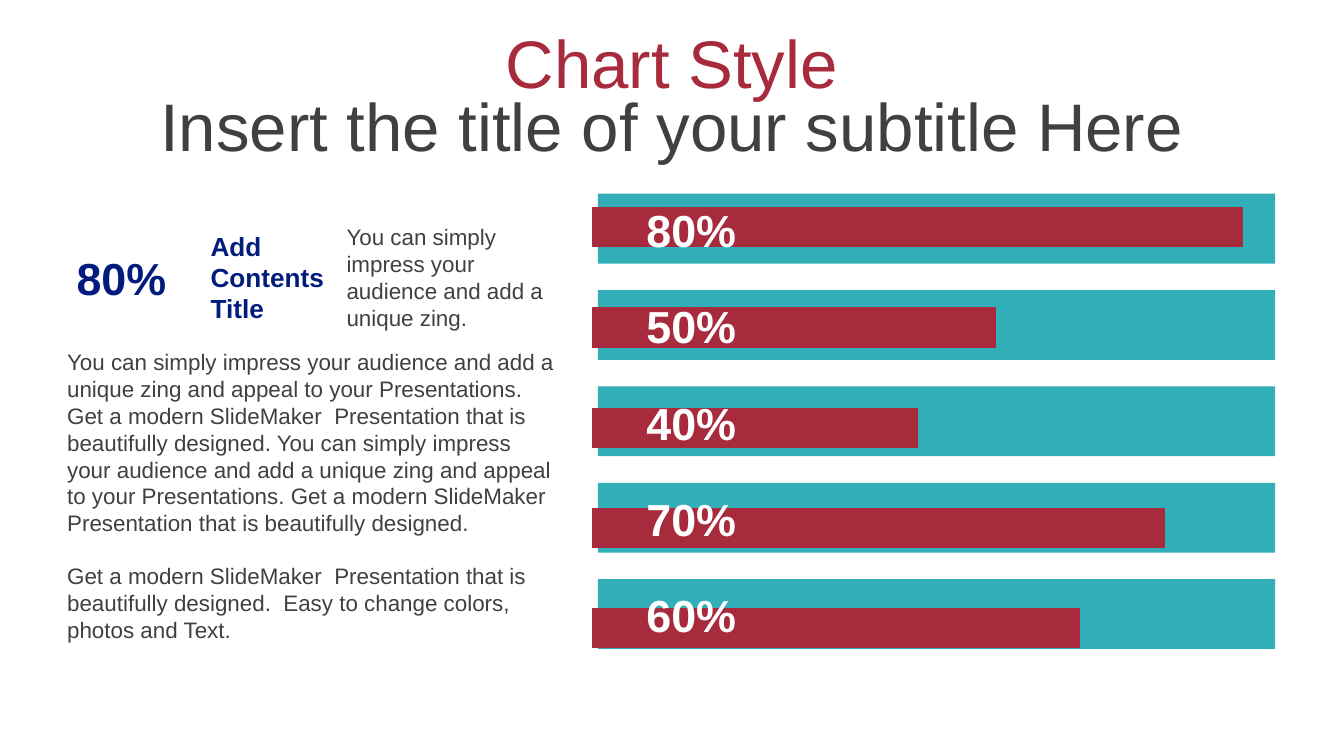
from lxml import etree
from pptx import Presentation
from pptx import util as u
from pptx.chart import data
from pptx.dml.color import RGBColor
from pptx.enum import chart as c, shapes, text
from pptx.oxml import ns

RED = RGBColor(0xA8, 0x2B, 0x3D)
TEAL = RGBColor(0x32, 0xAE, 0xB8)
NAVY = RGBColor(0x02, 0x1C, 0x7D)
GRAY = RGBColor(0x40, 0x40, 0x40)
WHITE = RGBColor(0xFF, 0xFF, 0xFF)
FONT = "Arial"
LEFT, CENTER = text.PP_ALIGN.LEFT, text.PP_ALIGN.CENTER
TOP, MIDDLE = text.MSO_ANCHOR.TOP, text.MSO_ANCHOR.MIDDLE

presentation = Presentation()
presentation.slide_width, presentation.slide_height = u.Cm(25.4), u.Cm(14.28)
slide = presentation.slides.add_slide(presentation.slide_layouts[6])


def add_text(box, paragraphs, size, color, bold=False, align=LEFT, anchor=TOP):
    shape = slide.shapes.add_textbox(*map(u.Cm, box))
    frame = shape.text_frame
    frame.word_wrap = True
    frame.vertical_anchor = anchor
    font_format = {"name": FONT, "size": u.Pt(size), "bold": bold}
    for index, words in enumerate(paragraphs):
        paragraph = frame.add_paragraph() if index else frame.paragraphs[0]
        paragraph.alignment = align
        if index:
            paragraph.space_before = u.Pt(14)
        run = paragraph.add_run()
        run.text = words
        for name, value in font_format.items():
            setattr(run.font, name, value)
        run.font.color.rgb = color


# Bands behind the chart
labels = ["80%", "50%", "40%", "70%", "60%"]
pitch = 1.82
for row in range(len(labels)):
    band = slide.shapes.add_shape(
        shapes.MSO_SHAPE.RECTANGLE,
        u.Cm(11.3), u.Cm(3.66 + row * pitch), u.Cm(12.8), u.Cm(1.32))
    band.shadow.inherit = False
    band.fill.solid()
    band.fill.fore_color.rgb = TEAL
    band.line.fill.background()

# Title and subtitle
add_text((0, 0.36, 25.4, 1.6), ["Chart Style"], 36, RED,
         align=CENTER, anchor=MIDDLE)
add_text((0, 1.96, 25.4, 0.79), ["Insert the title of your subtitle Here"],
         36, GRAY, align=CENTER, anchor=MIDDLE)

# Bar chart
chart_data = data.CategoryChartData()
chart_data.categories = ["1", "2", "3", "4", "5"]
chart_data.add_series("Series 1", (75, 88, 50, 62, 100))
chart = slide.shapes.add_chart(
    c.XL_CHART_TYPE.BAR_CLUSTERED,
    u.Cm(10.9), u.Cm(3.15), u.Cm(14.48), u.Cm(9.86), chart_data).chart
chart.has_legend = chart.has_title = False
chart.font.name, chart.font.size = FONT, u.Pt(18)
for axis in (chart.category_axis, chart.value_axis):
    axis.visible = False
    axis.has_major_gridlines = False
scale = {"minimum_scale": 0, "maximum_scale": 100}
for name, value in scale.items():
    setattr(chart.value_axis, name, value)
plot = chart.plots[0]
plot.gap_width = 150
plot.vary_by_categories = False
plot.series[0].format.fill.solid()
plot.series[0].format.fill.fore_color.rgb = RED

# Fixed plot area, as fractions of the chart
plot_area = chart.element.find(".//" + ns.qn("c:plotArea"))
for old_layout in plot_area.findall(ns.qn("c:layout")):
    plot_area.remove(old_layout)
layout = etree.Element(ns.qn("c:layout"))
manual = etree.SubElement(layout, ns.qn("c:manualLayout"))
settings = {"layoutTarget": "inner", "xMode": "edge", "yMode": "edge",
            "x": 0.02, "y": 0.02, "w": 0.85, "h": 0.96}
for name, value in settings.items():
    etree.SubElement(manual, ns.qn("c:" + name)).set("val", str(value))
plot_area.insert(0, layout)

# Percentages on the bars
for row, label in enumerate(labels):
    add_text((11.86, 3.7 + row * pitch, 2.41, 1.27), [label], 24, WHITE,
             bold=True, align=CENTER, anchor=MIDDLE)

# Text column
add_text((1.09, 4.6, 2.41, 1.27), ["80%"], 24, NAVY,
         bold=True, align=CENTER, anchor=MIDDLE)
add_text((3.73, 4.22, 2.79, 2.06), ["Add Contents Title"], 14, NAVY, bold=True)
add_text((6.3, 4.09, 4.6, 2.31),
         ["You can simply impress your audience and add a unique zing."],
         12, GRAY)
add_text((1.02, 6.45, 9.8, 5.89), [
    "You can simply impress your audience and add a unique zing and appeal to "
    "your Presentations. Get a modern SlideMaker  Presentation that is "
    "beautifully designed. You can simply impress your audience and add a "
    "unique zing and appeal to your Presentations. Get a modern SlideMaker  "
    "Presentation that is beautifully designed.",
    "Get a modern SlideMaker  Presentation that is beautifully designed.  "
    "Easy to change colors, photos and Text."], 12, GRAY)

presentation.save("out.pptx")
